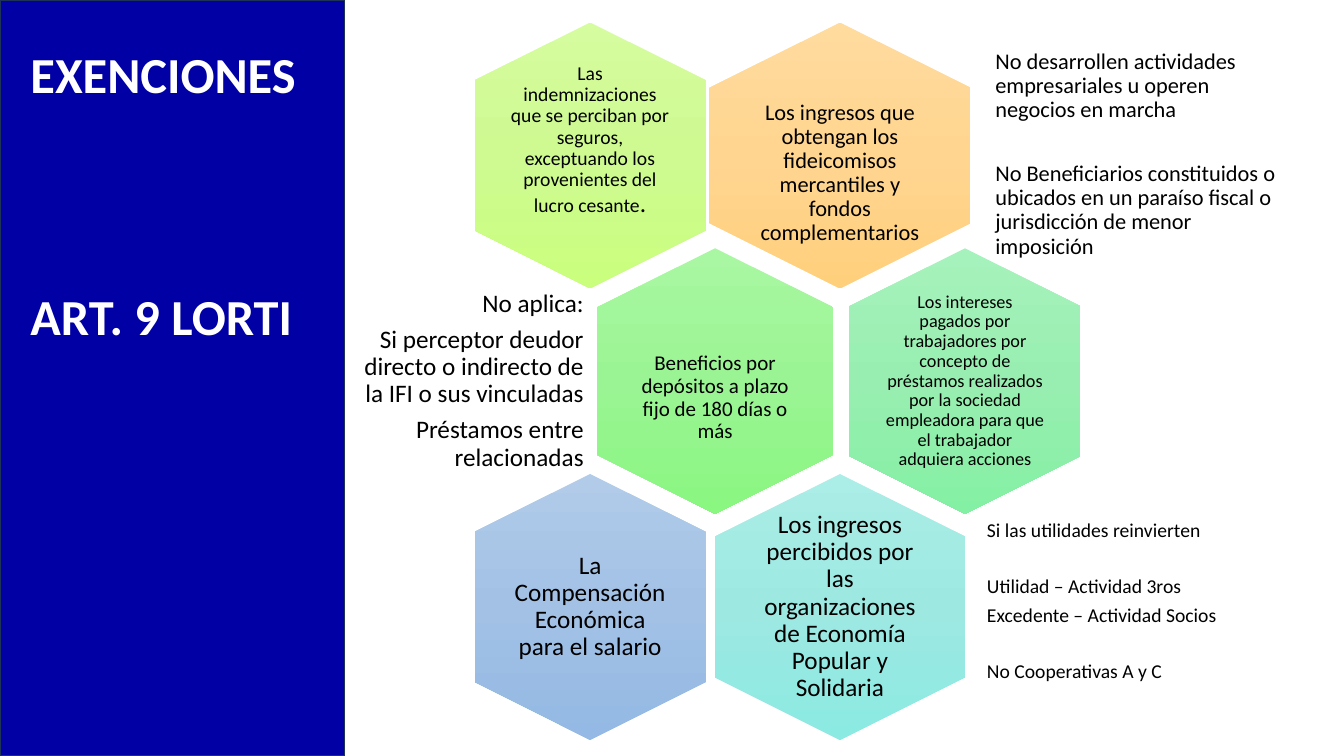
from copy import deepcopy

from pptx import Presentation
from pptx.dml.color import RGBColor
from pptx.enum.shapes import MSO_SHAPE
from pptx.enum.text import MSO_ANCHOR, MSO_AUTO_SIZE, PP_ALIGN
from pptx.util import Emu, Pt

HEXAGON, RECTANGLE = MSO_SHAPE.HEXAGON, MSO_SHAPE.RECTANGLE
LEFT, CENTER, RIGHT = PP_ALIGN.LEFT, PP_ALIGN.CENTER, PP_ALIGN.RIGHT
TOP, MIDDLE = MSO_ANCHOR.TOP, MSO_ANCHOR.MIDDLE
NO_AUTO_SIZE = MSO_AUTO_SIZE.NONE

NAVY = RGBColor(0x00, 0x00, 0xA4)
NAVY_EDGE = RGBColor(0x1E, 0x32, 0x56)
WHITE = RGBColor(0xFF, 0xFF, 0xFF)
BLACK = RGBColor(0x00, 0x00, 0x00)
ORANGE = [RGBColor(0xFF, 0xDB, 0x9E), RGBColor(0xFF, 0xD5, 0x90), RGBColor(0xFF, 0xD0, 0x7C)]
LIME = [RGBColor(0xD5, 0xFC, 0x9F), RGBColor(0xCE, 0xFA, 0x91), RGBColor(0xCA, 0xFF, 0x7D)]
GREEN = [RGBColor(0xA9, 0xF7, 0xA2), RGBColor(0x9B, 0xF4, 0x94), RGBColor(0x89, 0xF7, 0x80)]
MINT = [RGBColor(0xA6, 0xF2, 0xBC), RGBColor(0x98, 0xEE, 0xB0), RGBColor(0x84, 0xF0, 0xA4)]
AQUA = [RGBColor(0xAB, 0xED, 0xE7), RGBColor(0x9D, 0xE9, 0xE2), RGBColor(0x8B, 0xEA, 0xE2)]
BLUE = [RGBColor(0xB1, 0xCB, 0xE9), RGBColor(0xA3, 0xC1, 0xE5), RGBColor(0x93, 0xB9, 0xE4)]

FONT = "Calibri"
WIDTH, HEIGHT = 1280, 720
HEX_HEIGHT = 253
FIRST_ROW, ROW_PITCH = 148, 215

# column centre, row, hexagon width, colours, text size, text box, inset, text shift, text
CELLS = [
    (800, 0, 249, ORANGE, 16, (166, 170), 7, 17,
     ["Los ingresos que obtengan los fideicomisos mercantiles y fondos complementarios"]),
    (562, 0, 220, LIME, 14, (152, 174), 0, -14,
     ["Las indemnizaciones que se perciban por seguros, exceptuando los provenientes "
      "del lucro cesante", (".", 18)]),
    (681, 1, 225, GREEN, 15, (155, 174), 6, 16,
     ["Beneficios por depósitos a plazo fijo de 180 días o más"]),
    (919, 1, 220, MINT, 13, (152, 174), 0, 0,
     ["Los intereses pagados por trabajadores por concepto de préstamos realizados "
      "por la sociedad empleadora para que el trabajador adquiera acciones"]),
    (800, 2, 239, AQUA, 18, (161, 171), 7, 0,
     ["Los ingresos percibidos por las organizaciones de Economía Popular y Solidaria"]),
    (562, 2, 220, BLUE, 18, (152, 174), 0, 0,
     ["La Compensación Económica para el salario"]),
]

# box, text size, inset, alignment, paragraphs as (text, space before in points)
NOTES = [
    ((941, 71, 282, 152), 16, 7, LEFT,
     [("No desarrollen actividades empresariales u operen negocios en marcha", 0),
      ("No Beneficiarios constituidos o ubicados en un paraíso fiscal o jurisdicción "
       "de menor imposición", 23)]),
    ((337, 287, 226, 152), 18, 7, RIGHT,
     [("No aplica:", 0),
      ("Si perceptor deudor directo o indirecto de la IFI o sus vinculadas", 0),
      ("Préstamos entre relacionadas", 0)]),
    ((934, 497, 282, 152), 14, 6, LEFT,
     [("Si las utilidades reinvierten", 0),
      ("Utilidad – Actividad 3ros", 20),
      ("Excedente – Actividad Socios", 0),
      ("No Cooperativas A y C", 20)]),
]


def px(length):
    return Emu(round(length * 9525))


def place(left, top, width, height):
    return px(left), px(top), px(width), px(height)


def write(frame, paragraphs, size, align=LEFT, color=BLACK, bold=False,
          spacing=0.9, after=0.35, anchor=MIDDLE, insets=(0, 0)):
    """Each paragraph is (spans, space before); a span is a text or (text, size)."""
    frame.word_wrap = True
    frame.auto_size = NO_AUTO_SIZE
    frame.vertical_anchor = anchor
    frame.margin_left = frame.margin_right = px(insets[0])
    frame.margin_top = frame.margin_bottom = px(insets[1])
    for index, (spans, before) in enumerate(paragraphs):
        para = frame.add_paragraph() if index else frame.paragraphs[0]
        para.alignment = align
        para.line_spacing = spacing
        para.space_before = Pt(before)
        para.space_after = Pt(size * after)
        for item in spans:
            text, span_size = item if isinstance(item, tuple) else (item, size)
            span = para.add_run()
            span.text = text
            span.font.name = FONT
            span.font.size = Pt(span_size)
            span.font.bold = bold
            span.font.color.rgb = color


def fill_gradient(shape, colors):
    """The gradient turns with the shape, so angle 0 runs downwards after rotation."""
    shape.fill.gradient()
    shape.fill.gradient_angle = 0
    first = shape.fill.gradient_stops[0]._gs
    first.addnext(deepcopy(first))
    for index, (stop, color) in enumerate(zip(shape.fill.gradient_stops, colors)):
        stop.color.rgb = color
        stop.position = index / 2


def add_cell(page, center, row, width, colors, size, text_box, inset, shift, spans):
    middle = FIRST_ROW + ROW_PITCH * row
    # Hexagon standing on its point
    hexagon = page.shapes.add_shape(HEXAGON, *place(
        center - HEX_HEIGHT / 2, middle - width / 2, HEX_HEIGHT, width))
    hexagon.rotation = 90
    hexagon.adjustments[0] = 0.25
    hexagon.shadow.inherit = False
    hexagon.line.fill.background()
    fill_gradient(hexagon, colors)
    # Upright label
    label_width, label_height = text_box
    label = page.shapes.add_textbox(*place(
        center - label_width / 2, middle - label_height / 2 + shift, label_width, label_height))
    write(label.text_frame, [(spans, 0)], size, align=CENTER, insets=(inset, inset))


def add_note(page, box, size, inset, align, paragraphs):
    note = page.shapes.add_textbox(*place(*box))
    write(note.text_frame, [([text], before) for text, before in paragraphs],
          size, align=align, insets=(inset, inset))


def add_sidebar(page, left, top, width, height):
    panel = page.shapes.add_shape(RECTANGLE, *place(left, top, width, height))
    panel.shadow.inherit = False
    panel.fill.solid()
    panel.fill.fore_color.rgb = NAVY
    panel.line.color.rgb = NAVY_EDGE
    panel.line.width = Pt(1)
    # Title lies in front of the panel
    title = page.shapes.title
    title.left, title.top, title.width, title.height = place(left + 19, top + 36, width - 39, 300)
    write(title.text_frame, [(["EXENCIONES"], 0), (["ART. 9 LORTI"], 130)], 36,
          color=WHITE, bold=True, spacing=1.0, after=0, anchor=TOP, insets=(10, 5))
    panel._element.addnext(title._element)


def main():
    deck = Presentation()
    deck.slide_width, deck.slide_height = px(WIDTH), px(HEIGHT)
    page = deck.slides.add_slide(deck.slide_layouts[5])
    for cell in CELLS:
        add_cell(page, *cell)
    for note in NOTES:
        add_note(page, *note)
    add_sidebar(page, 0, 0, 328, HEIGHT)
    deck.save("out.pptx")


if __name__ == "__main__":
    main()
